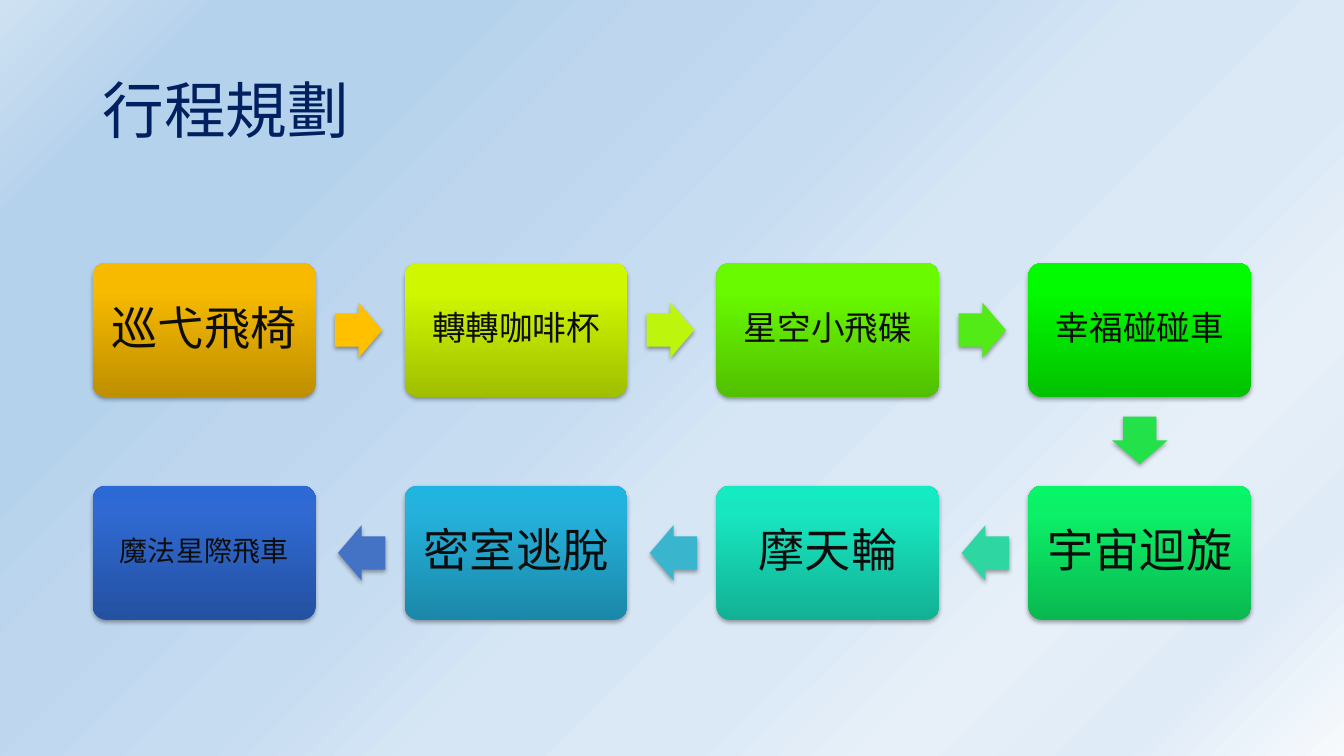
from lxml import etree
from pptx import Presentation
from pptx.dml.color import RGBColor
from pptx.enum.shapes import MSO_SHAPE
from pptx.enum.text import MSO_ANCHOR, PP_ALIGN
from pptx.oxml.ns import qn
from pptx.util import Pt

ROUNDED = MSO_SHAPE.ROUNDED_RECTANGLE
ARROW = MSO_SHAPE.RIGHT_ARROW
MIDDLE = MSO_ANCHOR.MIDDLE
CENTER = PP_ALIGN.CENTER

PX = 9144
SLIDE_WIDTH, SLIDE_HEIGHT = 1333, 750
TITLE_BOX = (92, 40, 1150, 145)
FLOW_BOX = (92, 261, 1149, 354)
COLUMNS = 4
STOP_WIDTH, STOP_HEIGHT = 221, 133
ARROW_LENGTH, ARROW_BREADTH = 47, 55
ARROW_POSITION = 0.495

TITLE_FONT = "Noto Sans CJK SC"
BODY_FONT = "Calibri"
NAVY = RGBColor(0x00, 0x20, 0x60)
INK = RGBColor(0x0D, 0x0D, 0x0D)
BLACK = RGBColor(0x00, 0x00, 0x00)


def gradient_stops(positions, colors):
    return [(position, RGBColor.from_string(color))
            for position, color in zip(positions, colors.split())]


SKY = gradient_stops(
    (0, 11, 22, 33, 45, 56, 68, 78, 89, 100),
    "CEE1F2 B5D2EC B5D2EC BED7EF C6DCF1 D6E6F5 DBE9F6 E7F0F9 DFEBF7 F7FAFD")

STOPS = [
    ("巡弋飛椅", 33, 14, "BE8F00 F7BA00 F8BB00", "FFC000"),
    ("轉轉咖啡杯", 24, 10, "A0BF00 CFF800 D0F900", "BEF50C"),
    ("星空小飛碟", 24, 10, "51C000 69FA00 6AFB00", "53EB17"),
    ("幸福碰碰車", 24, 10, "02C100 02FB00 02FC00", "23E148"),
    ("宇宙迴旋", 33, 14, "09B950 0CF068 07F668", "2ED7A1"),
    ("摩天輪", 33, 14, "12B194 18E6C0 14EBC3", "39B6CE"),
    ("密室逃脫", 33, 14, "1B88A9 24B1DB 20B4E0", "4472C4"),
    ("魔法星際飛車", 20, 8, "2451A1 2F69D1 2C69D5", None),
]


def px(*lengths):
    return [round(length * PX) for length in lengths]


def fill_gradient(fill, element, stops, angle):
    fill.gradient()
    fill.gradient_angle = angle
    stop_list = next(element.iter(qn("a:gsLst")))
    for child in list(stop_list):
        stop_list.remove(child)
    for position, color in stops:
        stop = etree.SubElement(stop_list, qn("a:gs"), pos=str(position * 1000))
        etree.SubElement(stop, qn("a:srgbClr"), val=str(color))


def add_shadow(shape):
    shape.shadow.inherit = False
    effects = shape._element.spPr.find(qn("a:effectLst"))
    shadow = etree.SubElement(effects, qn("a:outerShdw"), blurRad="40000",
                              dist="23000", dir="5400000", rotWithShape="0")
    color = etree.SubElement(shadow, qn("a:srgbClr"), val=str(BLACK))
    etree.SubElement(color, qn("a:alpha"), val="35000")


def write_text(shape, text, size, font_name, color):
    frame = shape.text_frame
    frame.word_wrap = True
    frame.vertical_anchor = MIDDLE
    paragraph = frame.paragraphs[0]
    paragraph.text = text
    paragraph.line_spacing = 0.9
    font = paragraph.font
    font.size = Pt(size)
    font.color.rgb = color
    font.name = font_name
    return paragraph


def add_title(slide, box):
    shape = slide.shapes.add_textbox(*px(*box))
    paragraph = write_text(shape, "行程規劃", 44, TITLE_FONT, NAVY)
    properties = next(paragraph._p.iter(qn("a:defRPr")))
    etree.SubElement(properties, qn("a:ea"), typeface=TITLE_FONT)


def add_stop(slide, center, text, size, inset, colors):
    x, y = center
    shape = slide.shapes.add_shape(ROUNDED, *px(
        x - STOP_WIDTH / 2, y - STOP_HEIGHT / 2, STOP_WIDTH, STOP_HEIGHT))
    shape.adjustments[0] = 0.1
    fill_gradient(shape.fill, shape._element,
                  gradient_stops((0, 80, 100), colors), 90)
    shape.line.fill.background()
    add_shadow(shape)
    frame = shape.text_frame
    frame.margin_left, frame.margin_top, frame.margin_right, frame.margin_bottom = px(
        inset, inset, inset, inset)
    write_text(shape, text, size, BODY_FONT, INK).alignment = CENTER


def add_arrow(slide, start, end, color):
    x, y = (a + (b - a) * ARROW_POSITION for a, b in zip(start, end))
    shape = slide.shapes.add_shape(ARROW, *px(
        x - ARROW_LENGTH / 2, y - ARROW_BREADTH / 2, ARROW_LENGTH, ARROW_BREADTH))
    shape.adjustments[0] = 0.6
    shape.adjustments[1] = 0.5
    if end[1] > start[1]:
        shape.rotation = 90
    elif end[0] < start[0]:
        shape.rotation = 180
    shape.fill.solid()
    shape.fill.fore_color.rgb = RGBColor.from_string(color)
    shape.line.fill.background()
    add_shadow(shape)


def add_flow(slide, box):
    left, top, width, height = box
    column_step = (width - STOP_WIDTH) / (COLUMNS - 1)
    row_step = height - STOP_HEIGHT
    centers = []
    for index in range(len(STOPS)):
        row, column = divmod(index, COLUMNS)
        if row % 2:
            column = COLUMNS - 1 - column
        centers.append((left + STOP_WIDTH / 2 + column * column_step,
                        top + STOP_HEIGHT / 2 + row * row_step))
    for index, (text, size, inset, colors, arrow_color) in enumerate(STOPS):
        add_stop(slide, centers[index], text, size, inset, colors)
        if arrow_color:
            add_arrow(slide, centers[index], centers[index + 1], arrow_color)


def main():
    presentation = Presentation()
    presentation.slide_width, presentation.slide_height = px(SLIDE_WIDTH, SLIDE_HEIGHT)
    slide = presentation.slides.add_slide(presentation.slide_layouts[6])
    fill_gradient(slide.background.fill, slide._element, SKY, 315)
    add_title(slide, TITLE_BOX)
    add_flow(slide, FLOW_BOX)
    presentation.save("out.pptx")


if __name__ == "__main__":
    main()
